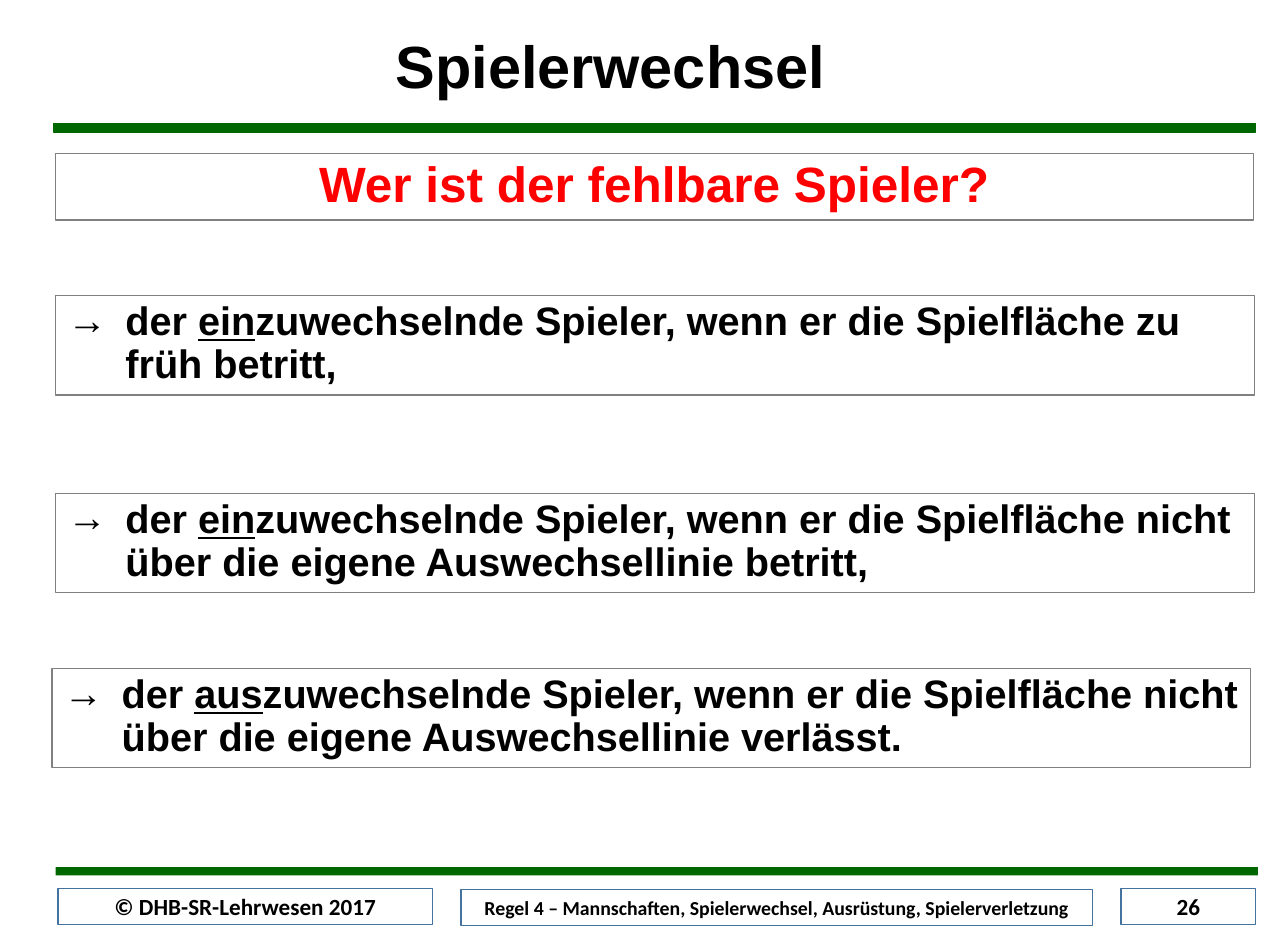
from lxml.etree import SubElement
from pptx import Presentation
from pptx.dml.color import RGBColor
from pptx.enum.shapes import MSO_SHAPE
from pptx.enum.text import MSO_ANCHOR, MSO_AUTO_SIZE, PP_ALIGN
from pptx.oxml.ns import qn
from pptx.util import Cm, Pt

GREEN = RGBColor(0x00, 0x66, 0x00)
BLUE = RGBColor(0x43, 0x73, 0x9E)
GREY = RGBColor(0x80, 0x80, 0x80)
RED = RGBColor(0xFF, 0x00, 0x00)
BLACK = RGBColor(0x00, 0x00, 0x00)
WHITE = RGBColor(0xFF, 0xFF, 0xFF)

HANGING_INDENT = Cm(1.24)


def add_panel(slide, box, fill, border=None, border_width=0.75):
    panel = slide.shapes.add_shape(MSO_SHAPE.RECTANGLE, *box)
    panel.shadow.inherit = False
    panel.fill.solid()
    panel.fill.fore_color.rgb = fill
    if border is None:
        panel.line.fill.background()
    else:
        panel.line.color.rgb = border
        panel.line.width = Pt(border_width)
    return panel


def start_text(shape, alignment, anchor=MSO_ANCHOR.TOP, spacing=0.9):
    frame = shape.text_frame
    frame.word_wrap = True
    frame.auto_size = MSO_AUTO_SIZE.NONE
    frame.vertical_anchor = anchor
    paragraph = frame.paragraphs[0]
    paragraph.alignment = alignment
    paragraph.line_spacing = spacing
    paragraph.space_before = Pt(0)
    return paragraph


def add_run(paragraph, text, size, font="Arial", color=BLACK, underline=None):
    run = paragraph.add_run()
    run.text = text
    run.font.name = font
    run.font.size = Pt(size)
    run.font.bold = True
    run.font.underline = underline
    run.font.color.rgb = color


def add_arrow_bullet(paragraph):
    properties = paragraph._p.get_or_add_pPr()
    properties.set("marL", str(HANGING_INDENT))
    properties.set("indent", str(-HANGING_INDENT))
    SubElement(properties, qn("a:buFont")).set("typeface", "Arial")
    SubElement(properties, qn("a:buChar")).set("char", "→")


def place_heading(slide, left, top, width):
    title = slide.shapes.title
    title.left, title.top = left + Cm(6.4), top
    title.width, title.height = Cm(11), Cm(1.47)
    add_run(start_text(title, PP_ALIGN.CENTER), "Spielerwechsel", 36)
    add_panel(slide, (left, top + Cm(1.98), width, Cm(0.18)), GREEN, GREEN)


def place_question(slide, box):
    question = add_panel(slide, box, WHITE, GREY)
    paragraph = start_text(question, PP_ALIGN.CENTER)
    add_run(paragraph, "Wer ist der fehlbare Spieler?", 30, color=RED)


def place_answer(slide, box, prefix, ending):
    answer = add_panel(slide, box, WHITE, GREY)
    paragraph = start_text(answer, PP_ALIGN.LEFT)
    add_arrow_bullet(paragraph)
    add_run(paragraph, "der ", 24)
    add_run(paragraph, prefix, 24, underline=True)
    add_run(paragraph, "zuwechselnde Spieler, wenn er die Spielfläche " + ending, 24)


def place_footer(slide, left, top, width):
    add_panel(slide, (left, top, width, Cm(0.18)), GREEN)
    fields = [
        (0.05, 0.46, 8, "© DHB-SR-Lehrwesen 2017", 14),
        (8.66, 0.48, 13.49, "Regel 4 – Mannschaften, Spielerwechsel, Ausrüstung, Spielerverletzung", 12),
        (22.76, 0.46, 2.87, "26", 14),
    ]
    for offset, drop, field_width, text, size in fields:
        box = (left + Cm(offset), top + Cm(drop), Cm(field_width), Cm(0.77))
        field = add_panel(slide, box, WHITE, BLUE, 1)
        paragraph = start_text(field, PP_ALIGN.CENTER, MSO_ANCHOR.MIDDLE, 1.0)
        add_run(paragraph, text, size, "Calibri")


def main():
    presentation = Presentation()
    presentation.slide_width = Cm(27.51)
    presentation.slide_height = Cm(20.12)
    slide = presentation.slides.add_slide(presentation.slide_layouts[5])

    place_heading(slide, Cm(1.14), Cm(0.66), Cm(25.68))
    place_question(slide, (Cm(1.19), Cm(3.28), Cm(25.58), Cm(1.42)))
    answers = [
        (1.19, 6.32, "ein", "zu früh betritt,"),
        (1.19, 10.54, "ein", "nicht über die eigene Auswechsellinie betritt,"),
        (1.11, 14.28, "aus", "nicht über die eigene Auswechsellinie verlässt."),
    ]
    for left, top, prefix, ending in answers:
        place_answer(slide, (Cm(left), Cm(top), Cm(25.6), Cm(2.12)), prefix, ending)
    place_footer(slide, Cm(1.19), Cm(18.52), Cm(25.68))

    presentation.save("out.pptx")


if __name__ == "__main__":
    main()
